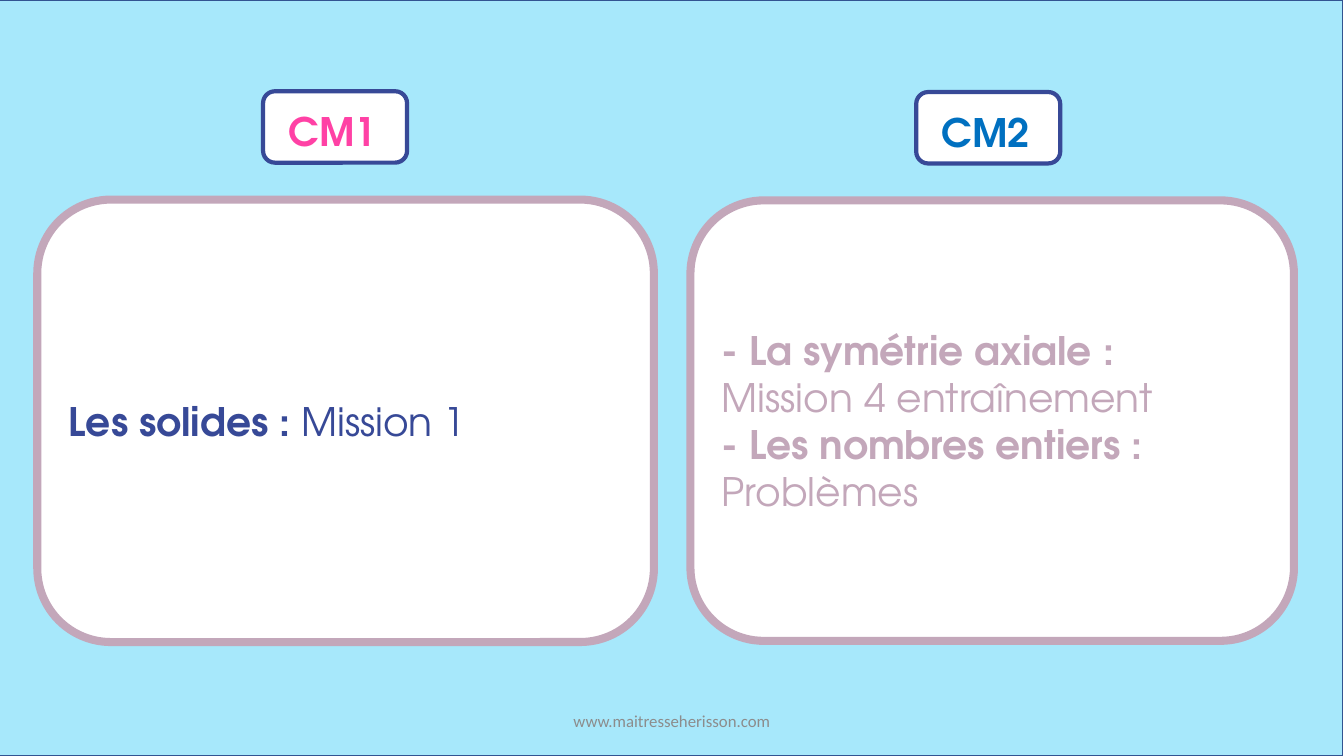
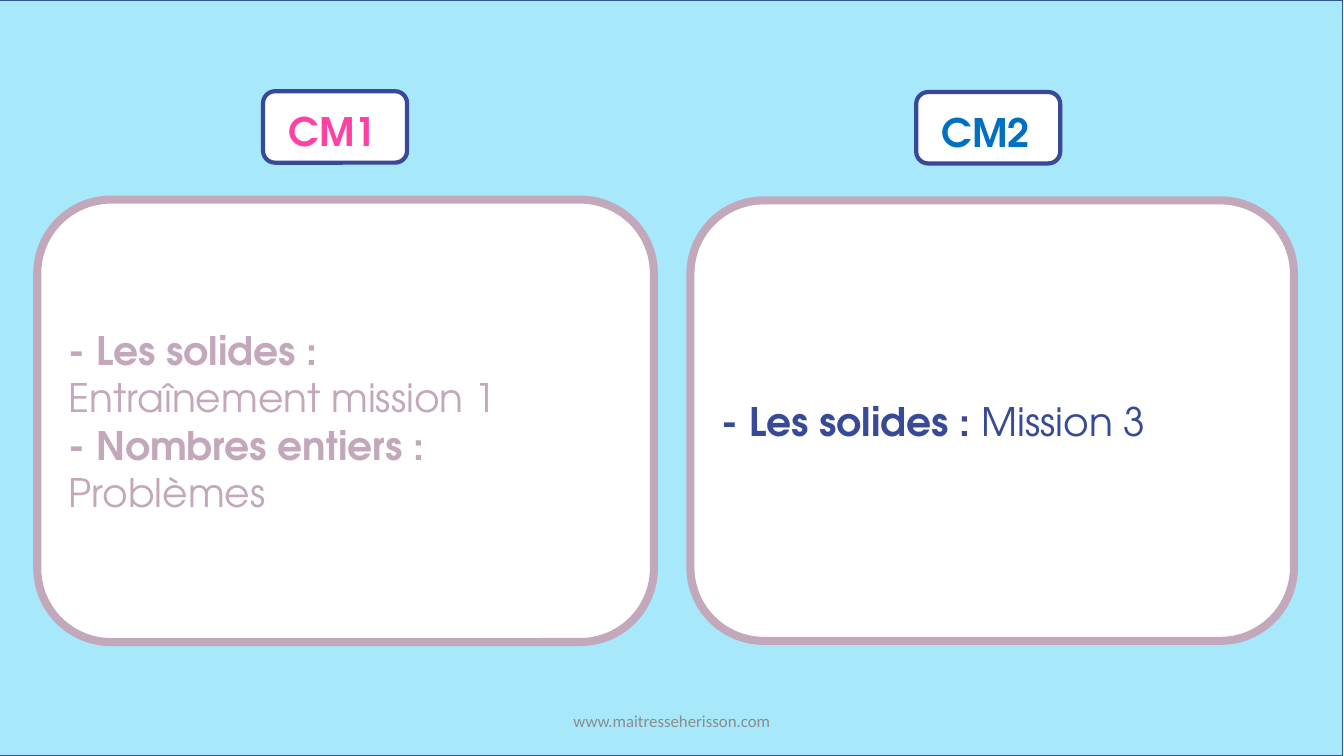
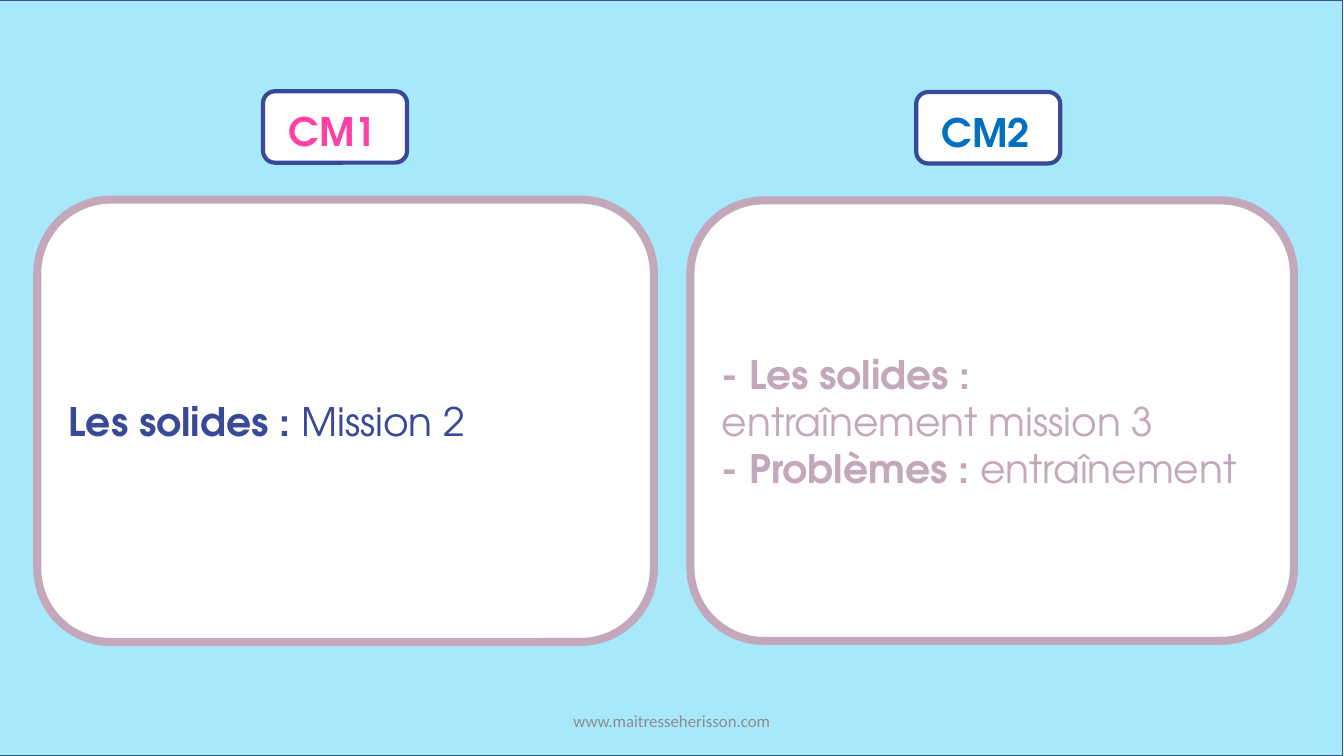
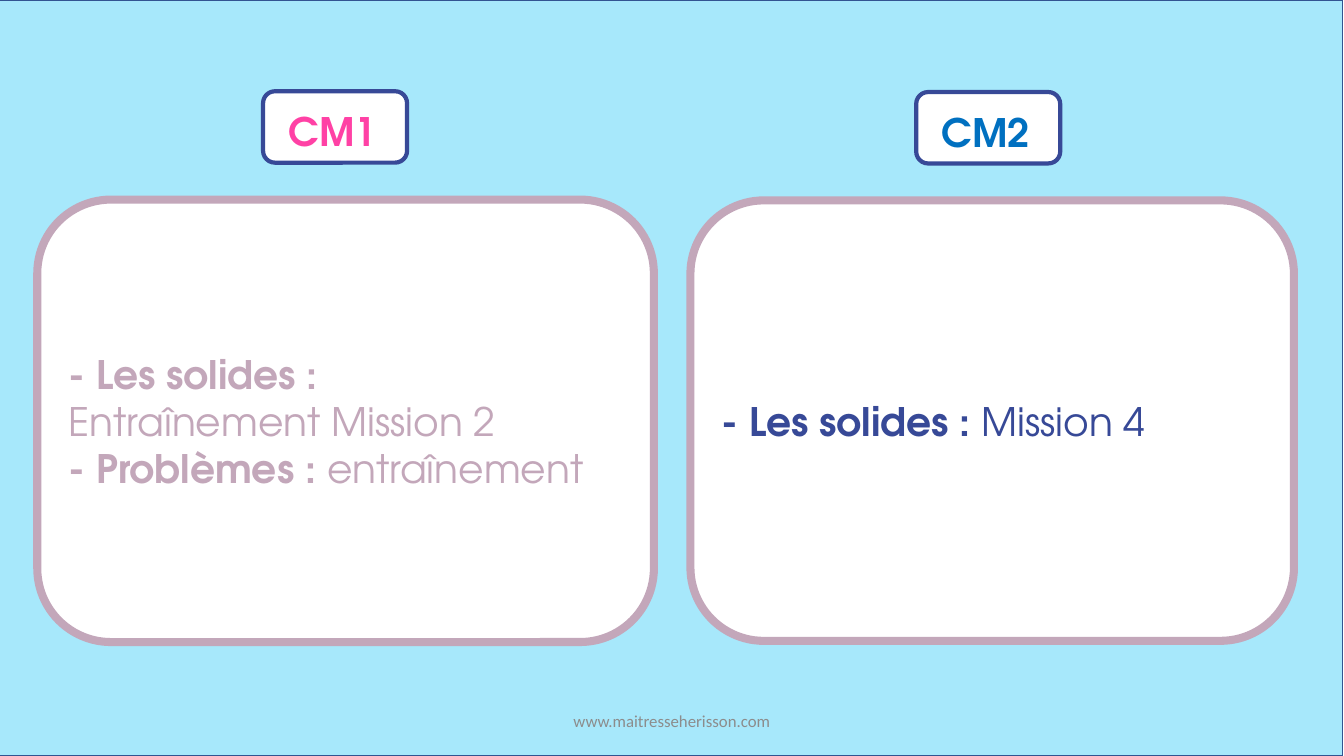
from pptx import Presentation
from pptx.dml.color import RGBColor
from pptx.enum.shapes import MSO_SHAPE as Shape
from pptx.enum.text import MSO_ANCHOR as Anchor, MSO_AUTO_SIZE as AutoSize, PP_ALIGN as Align
from pptx.util import Cm, Pt

COLORS = {
    "sky": "A7E8FB",
    "edge": "325491",
    "white": "FFFFFF",
    "navy": "374997",
    "mauve": "C3A7BA",
    "pink": "FF41A5",
    "blue": "0070C0",
    "grey": "8C8C8C",
}
LESSON_FONT = "TeX Gyre Adventor"
FOOTER_FONT = "Calibri"
WIDTH, HEIGHT = 33.87, 19.05

# Level name, its colour and the box of its card (left, top, width, height in cm)
LEVELS = [
    ("CM1", "pink", (0.94, 5.03, 15.54, 11.15)),
    ("CM2", "blue", (17.4, 5.05, 15.21, 11.1)),
]

# Per slide, one entry per level: text colour and lines of (bold, regular) text
SESSIONS = [
    [
        ("navy", [("Les solides : ", "Mission 1")]),
        ("mauve", [("- La symétrie axiale :", ""), ("", "Mission 4 entraînement"),
                   ("- Les nombres entiers : ", "Problèmes")]),
    ],
    [
        ("mauve", [("- Les solides :", ""), ("", "Entraînement mission 1"),
                   ("- Nombres entiers : ", "Problèmes")]),
        ("navy", [("- Les solides : ", "Mission 3")]),
    ],
    [
        ("navy", [("Les solides : ", "Mission 2")]),
        ("mauve", [("- Les solides :", ""), ("", "entraînement mission 3"),
                   ("- Problèmes : ", "entraînement")]),
    ],
    [
        ("mauve", [("- Les solides :", ""), ("", "Entraînement Mission 2"),
                   ("- Problèmes : ", "entraînement")]),
        ("navy", [("- Les solides : ", "Mission 4")]),
    ],
]


def color(name):
    return RGBColor.from_string(COLORS[name])


def add_box(shapes, kind, box, fill, line, line_width):
    shape = shapes.add_shape(kind, *[Cm(length) for length in box])
    shape.shadow.inherit = False
    shape.fill.solid()
    shape.fill.fore_color.rgb = color(fill)
    shape.line.color.rgb = color(line)
    shape.line.width = Pt(line_width)
    return shape


def write_text(shape, lines, *, text_color, size=28, font=LESSON_FONT,
               align=Align.LEFT, anchor=Anchor.MIDDLE, autosize=AutoSize.NONE):
    """Write lines of (bold, regular) text into a shape."""
    frame = shape.text_frame
    frame.word_wrap = True
    frame.auto_size = autosize
    frame.vertical_anchor = anchor
    for index, line in enumerate(lines):
        paragraph = frame.add_paragraph() if index else frame.paragraphs[0]
        paragraph.alignment = align
        for text, bold in zip(line, (True, False)):
            if text:
                run = paragraph.add_run()
                run.text = text
                run.font.name = font
                run.font.size = Pt(size)
                run.font.bold = bold
                run.font.color.rgb = color(text_color)


def add_tag(slide, name, name_color, left, top):
    group = slide.shapes.add_group_shape()
    add_box(group.shapes, Shape.ROUNDED_RECTANGLE, (left, top, 3.63, 1.8), "white", "navy", 3)
    label = group.shapes.add_textbox(Cm(left + 0.4), Cm(top + 0.28), Cm(2.8), Cm(1.45))
    write_text(label, [(name, "")], text_color=name_color,
               anchor=Anchor.TOP, autosize=AutoSize.SHAPE_TO_FIT_TEXT)


def add_level(slide, level, task):
    name, name_color, box = level
    text_color, lines = task
    card = add_box(slide.shapes, Shape.ROUNDED_RECTANGLE, box, "white", "mauve", 5.75)
    write_text(card, lines, text_color=text_color)
    add_tag(slide, name, name_color, box[0] + 5.69, box[1] - 2.73)


def add_footer(slide):
    width = 11.43
    footer = slide.shapes.add_textbox(Cm((WIDTH - width) / 2), Cm(17.66), Cm(width), Cm(1.01))
    write_text(footer, [("", "www.maitresseherisson.com")], text_color="grey",
               size=12, font=FOOTER_FONT, align=Align.CENTER)


def add_session(presentation, tasks):
    slide = presentation.slides.add_slide(presentation.slide_layouts[6])
    # Framed background
    add_box(slide.shapes, Shape.RECTANGLE, (-0.03, 0, WIDTH, HEIGHT), "sky", "edge", 1)
    for level, task in zip(LEVELS, tasks):
        add_level(slide, level, task)
    add_footer(slide)


def main():
    presentation = Presentation()
    presentation.slide_width = Cm(WIDTH)
    presentation.slide_height = Cm(HEIGHT)
    for tasks in SESSIONS:
        add_session(presentation, tasks)
    presentation.save("out.pptx")


if __name__ == "__main__":
    main()
